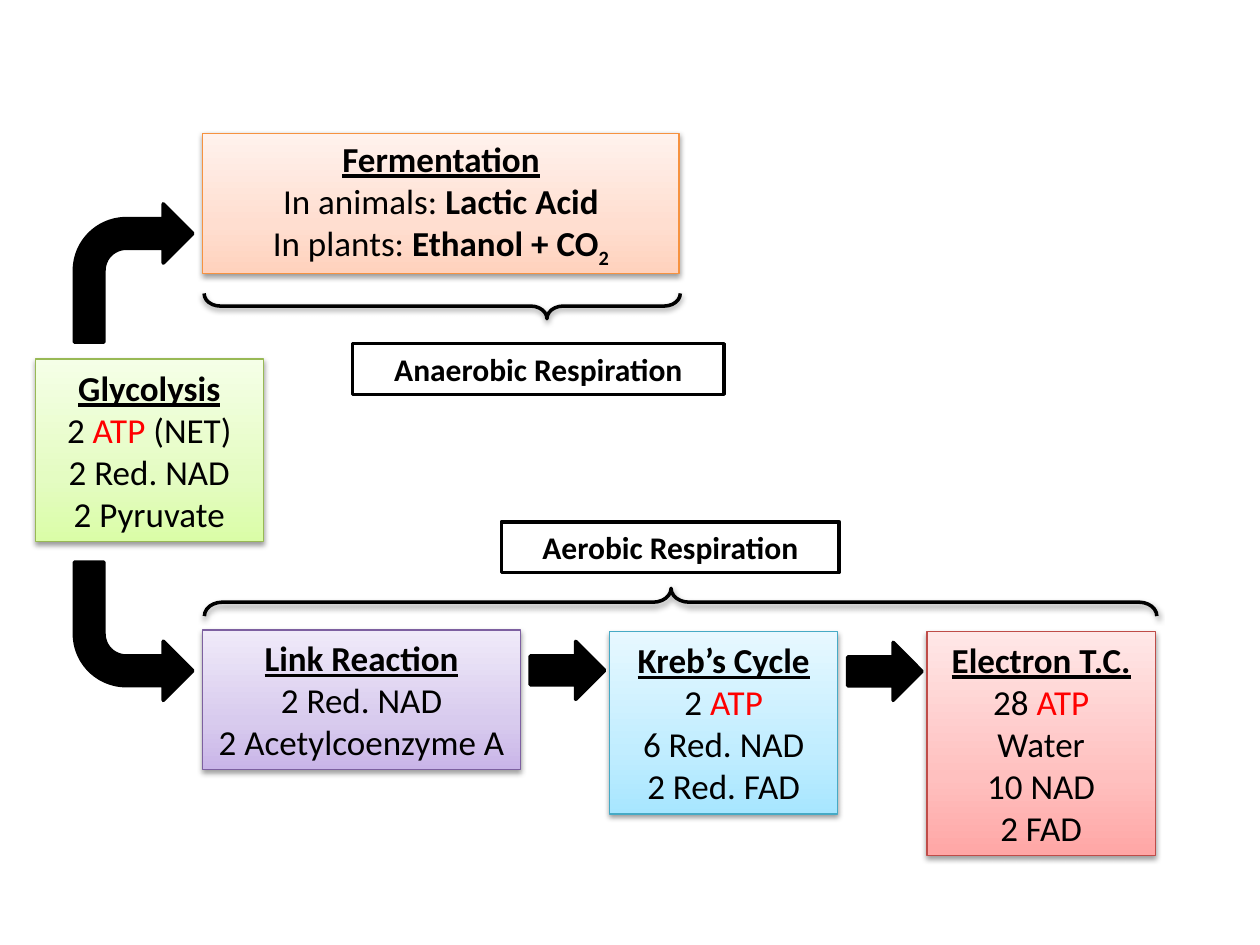
"""Build a slide that maps anaerobic and aerobic respiration from glycolysis."""
from copy import deepcopy

from lxml.etree import SubElement
from pptx import Presentation
from pptx.dml.color import RGBColor
from pptx.enum.shapes import MSO_SHAPE as Form
from pptx.enum.text import MSO_AUTO_SIZE as AutoSize, PP_ALIGN as Align
from pptx.oxml.ns import qn
from pptx.util import Cm, Pt

COLORS = {
    "black": "000000", "white": "FFFFFF", "red": "FF0000",
    "green": ("98B955", "DAFDA7", "E4FCC2", "F5FFE7"),
    "purple": ("7D60A0", "C9B5E8", "D8CBEE", "F0EAF9"),
    "blue": ("46AAC5", "A7E6FF", "C1EDFF", "E7F8FF"),
    "rose": ("BF4C48", "FFA6A5", "FFC0BF", "FFE7E7"),
    "orange": ("F69240", "FFD2BD", "FFDED0", "FFF2ED"),
}
ATP = ("ATP", "red")

deck = Presentation()
deck.slide_width, deck.slide_height = Cm(25.4), Cm(19.05)
page = deck.slides.add_slide(deck.slide_layouts[6])


def add_form(form, place, line=COLORS["black"], width=2, shadow=False):
    shape = page.shapes.add_shape(form, *(Cm(length) for length in place))
    shape.line.color.rgb = RGBColor.from_string(line)
    shape.line.width = Pt(width)
    shape.shadow.inherit = False
    if shadow:
        effects = shape._element.spPr.find(qn("a:effectLst"))
        outer = SubElement(effects, qn("a:outerShdw"), blurRad="40000", dist="20000",
                           dir="5400000", rotWithShape="0")
        color = SubElement(outer, qn("a:srgbClr"), val=COLORS["black"])
        SubElement(color, qn("a:alpha"), val="38000")
    return shape


def write(box, lines, size):
    frame = box.text_frame
    frame.word_wrap = True
    frame.auto_size = AutoSize.SHAPE_TO_FIT_TEXT
    for number, line in enumerate(lines):
        para = frame.add_paragraph() if number else frame.paragraphs[0]
        para.alignment = Align.CENTER
        for text, style in line:
            span = para.add_run()
            span.text = text
            span.font.name = "Calibri"
            span.font.size = Pt(size)
            span.font.bold = style in ("title", "bold", "sub")
            span.font.underline = style == "title"
            color = COLORS["red" if style == "red" else "black"]
            span.font.color.rgb = RGBColor.from_string(color)
            if style == "sub":
                span.font._element.set("baseline", "-25000")


stages = [
    ("green", (0.71, 7.24, 4.6, 3.68), "Glycolysis",
     [[("2 ", ""), ATP, (" (NET)", "")], [("2 Red. NAD", "")], [("2 Pyruvate", "")]]),
    ("purple", (4.09, 12.7, 6.4, 2.82), "Link Reaction",
     [[("2 Red. NAD", "")], [("2 Acetylcoenzyme A", "")]]),
    ("blue", (12.29, 12.73, 4.6, 3.68), "Kreb’s Cycle",
     [[("2 ", ""), ATP], [("6 Red. NAD", "")], [("2 Red. FAD", "")]]),
    ("rose", (18.69, 12.73, 4.6, 4.52), "Electron T.C.",
     [[("28 ", ""), ATP], [("Water", "")], [("10 NAD", "")], [("2 FAD", "")]]),
    ("orange", (4.09, 2.69, 9.6, 2.82), "Fermentation",
     [[("In animals: ", ""), ("Lactic Acid", "bold")],
      [("In plants: ", ""), ("Ethanol + CO", "bold"), ("2", "sub")]]),
]
for palette, place, title, products in stages:
    edge, *shades = COLORS[palette]
    box = add_form(Form.RECTANGLE, place, edge, 0.75, shadow=True)
    box.fill.gradient()
    box.fill.gradient_angle = 90
    first = box._element.spPr.find(qn("a:gradFill")).find(qn("a:gsLst"))[0]
    first.addnext(deepcopy(first))
    for stop, position, shade in zip(box.fill.gradient_stops, (0, 0.35, 1), shades):
        stop.position = position
        stop.color.rgb = RGBColor.from_string(shade)
    write(box, [[(title, "title")], *products], 20)

arrows = [
    (Form.BENT_ARROW, (1.5, 4.11, 2.39, 2.79), False),
    (Form.BENT_ARROW, (1.5, 11.33, 2.39, 2.79), True),
    (Form.RIGHT_ARROW, (10.69, 12.93, 1.5, 1.17), False),
    (Form.RIGHT_ARROW, (17.09, 12.95, 1.5, 1.17), False),
]
for form, place, mirrored in arrows:
    arrow = add_form(form, place)
    arrow.fill.solid()
    arrow.fill.fore_color.rgb = RGBColor.from_string(COLORS["black"])
    if mirrored:
        arrow.rotation = 180
        arrow._element.spPr.xfrm.set("flipH", "1")

groups = [
    ("Aerobic Respiration", (10.11, 10.52, 6.81, 1.02),
     (13.44, 2.54, 0.56, 19.2), 90, 0.51),
    ("Anaerobic Respiration", (7.11, 6.93, 7.49, 1.02),
     (8.66, 1.37, 0.51, 9.6), 270, 0.72),
]
for name, label_place, brace_place, turn, tip in groups:
    brace = add_form(Form.LEFT_BRACE, brace_place, shadow=True)
    brace.rotation = turn
    brace.fill.background()
    brace.adjustments[0] = 0.64
    brace.adjustments[1] = tip
    label = add_form(Form.RECTANGLE, label_place)
    label.fill.solid()
    label.fill.fore_color.rgb = RGBColor.from_string(COLORS["white"])
    write(label, [[(name, "bold")]], 18)

deck.save("out.pptx")
